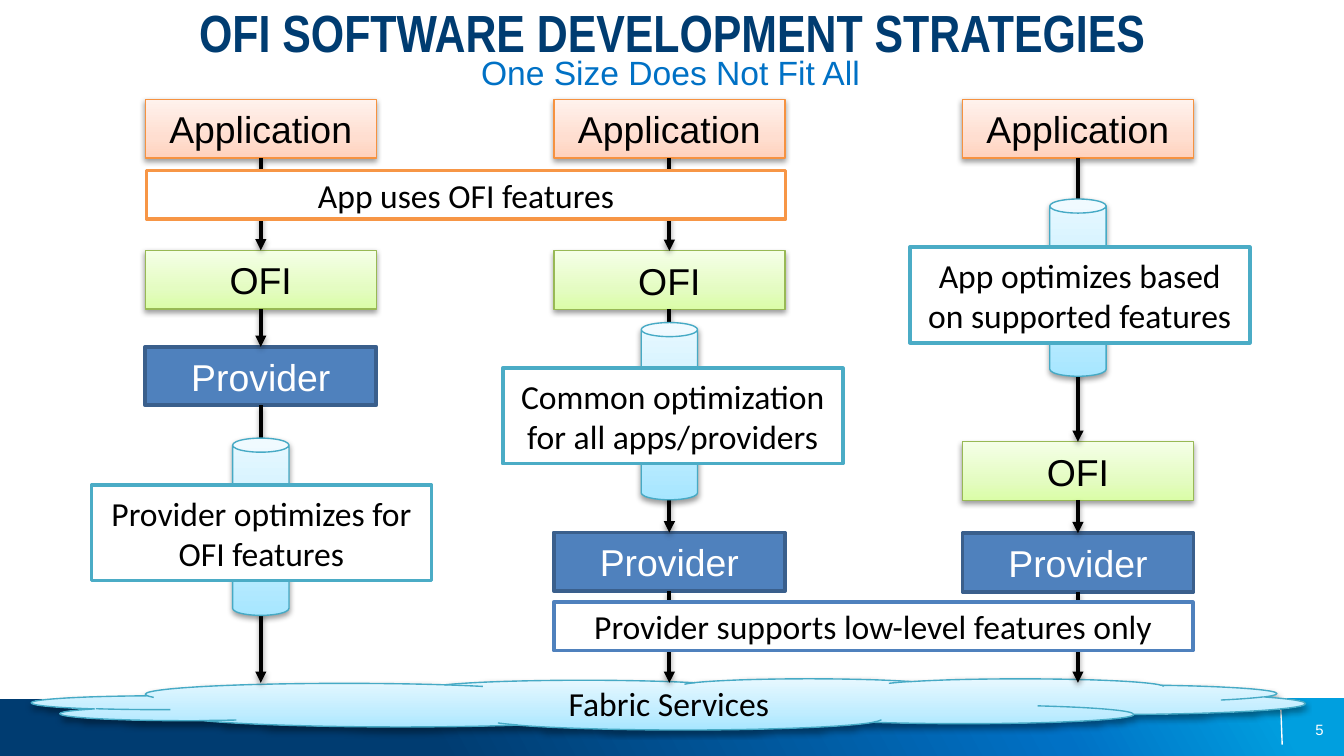
from lxml.etree import SubElement
from pptx import Presentation
from pptx.dml.color import RGBColor
from pptx.enum.shapes import MSO_CONNECTOR, MSO_SHAPE
from pptx.enum.text import MSO_ANCHOR, MSO_AUTO_SIZE, PP_ALIGN
from pptx.oxml.ns import qn
from pptx.util import Pt

PEACH = [(0, "FFD2BD"), (35, "FFDED0"), (100, "FFF2ED")]
LIME = [(0, "DAFDA7"), (35, "E4FCC2"), (100, "F5FFE7")]
SKY = [(0, "A7E6FF"), (35, "C1EDFF"), (100, "E7F8FF")]
FOOTER = [(32, "003C71"), (78, "0071C5"), (95, "009FDF")]

LAYERS = {
    "Application": dict(fill=PEACH, line="F69240", shadow=True),
    "OFI": dict(fill=LIME, line="98B955", shadow=True),
    "Provider": dict(fill="4F81BD", line="3A5F8C", weight=2),
}
FIRST_LEFT, PITCH = 77.8, 218.9
LAYER_WIDTH, LAYER_HEIGHT = 123.8, 31.4
CAN_WIDTH, CAN_HEIGHT = 30.2, 95
APPLICATION_TOP, FABRIC_TOP = 53.2, 365.8

COLUMNS = [
    dict(ofi=134.1, provider=185.8, can=234.7, label=(49, 259.9),
         text="Provider optimizes for OFI features"),
    dict(ofi=134.4, provider=285.3, can=172.8, label=(269.3, 197.3),
         text="Common optimization for all apps/providers"),
    dict(ofi=236.7, provider=285.7, can=106.6, label=(487.4, 132.5),
         text="App optimizes based on supported features"),
]
BANDS = [
    ("App uses OFI features", 78.5, 91.4, "F79646"),
    ("Provider supports low-level features only", 296.6, 322.6, "4F81BD"),
]


def color(value):
    return RGBColor.from_string(value)


def write(box, text, *, size=18, font="Calibri", ink="000000", bold=False,
          align=PP_ALIGN.CENTER, anchor=MSO_ANCHOR.MIDDLE, insets=(7.2, 3.6, 7.2, 3.6)):
    frame = box.text_frame
    frame.word_wrap = True
    frame.auto_size = MSO_AUTO_SIZE.NONE
    frame.vertical_anchor = anchor
    frame.margin_left, frame.margin_top, frame.margin_right, frame.margin_bottom = map(Pt, insets)
    para = frame.paragraphs[0]
    para.alignment = align
    span = para.add_run()
    span.text = text
    span.font.size = Pt(size)
    span.font.name = font
    span.font.bold = bold
    span.font.color.rgb = color(ink)


def add_gradient(shape, stops, angle):
    shape.fill.gradient()
    shape.fill.gradient_angle = 360 - angle
    stop_list = shape._element.spPr.find(qn("a:gradFill")).find(qn("a:gsLst"))
    for stop in list(stop_list):
        stop_list.remove(stop)
    for position, value in stops:
        stop = SubElement(stop_list, qn("a:gs"), pos=str(position * 1000))
        SubElement(stop, qn("a:srgbClr"), val=str(color(value)))


def add_shadow(effects):
    shadow = SubElement(effects, qn("a:outerShdw"), blurRad=str(Pt(3.1)), dist=str(Pt(1.6)),
                        dir="5400000", rotWithShape="0")
    tint = SubElement(shadow, qn("a:srgbClr"), val="000000")
    SubElement(tint, qn("a:alpha"), val="38000")


def add_figure(page, kind, left, top, width, height, *, fill="FFFFFF", line=None,
               weight=0.75, angle=270, shadow=False):
    shape = page.shapes.add_shape(kind, Pt(left), Pt(top), Pt(width), Pt(height))
    if isinstance(fill, str):
        shape.fill.solid()
        shape.fill.fore_color.rgb = color(fill)
    else:
        add_gradient(shape, fill, angle)
    if line:
        shape.line.color.rgb = color(line)
        shape.line.width = Pt(weight)
    else:
        shape.line.fill.background()
    shape.shadow.inherit = False
    if shadow:
        add_shadow(shape._element.spPr.find(qn("a:effectLst")))
    return shape


def add_line(page, start, end, *, ink="000000", weight=2, arrow=True):
    line = page.shapes.add_connector(MSO_CONNECTOR.STRAIGHT, *map(Pt, start + end))
    line.line.color.rgb = color(ink)
    line.line.width = Pt(weight)
    effects = SubElement(line._element.spPr, qn("a:effectLst"))
    if arrow:
        SubElement(line.line._get_or_add_ln(), qn("a:tailEnd"), type="triangle")
        add_shadow(effects)
    return line


def add_text(page, text, left, top, width, height, **style):
    box = page.shapes.add_textbox(Pt(left), Pt(top), Pt(width), Pt(height))
    write(box, text, **style)


def add_label(page, text, left, top, width, height, line):
    label = add_figure(page, MSO_SHAPE.RECTANGLE, left, top, width, height, line=line, weight=2)
    write(label, text)


def add_title(page):
    title = page.shapes.title
    title.left, title.top, title.width, title.height = map(Pt, (36, 0, 648, 27.4))
    write(title, "OFI SOFTWARE DEVELOPMENT STRATEGIES", size=28, font="Arial Narrow",
          ink="003C71", bold=True, anchor=MSO_ANCHOR.TOP, insets=(0, 0, 0, 0))
    add_text(page, "One Size Does Not Fit All", 35.3, 24.5, 648, 23, font="Arial",
             ink="0071C5", anchor=MSO_ANCHOR.TOP)


def add_footer(page):
    add_figure(page, MSO_SHAPE.RECTANGLE, 0, 374.4, 720, 30.6, fill=FOOTER, angle=331)
    add_line(page, (686.2, 380.2), (686.9, 398.9), ink="FFFFFF", weight=0.75, arrow=False)
    add_text(page, "5", 541.4, 380.2, 167.8, 21.6, size=8, font="Arial", ink="FFFFFF",
             align=PP_ALIGN.RIGHT, insets=(0, 0, 0, 0))
    cloud = add_figure(page, MSO_SHAPE.CLOUD, 17.3, 363.6, 681.8, 27.4, fill=SKY,
                       line="46AAC5", shadow=True)
    write(cloud, "Fabric Services", insets=(56, 3.6, 7.2, 3.6))


def add_column(page, left, column):
    middle = left + LAYER_WIDTH / 2
    tops = (APPLICATION_TOP, column["ofi"], column["provider"])
    layers = []
    for (name, style), top in zip(LAYERS.items(), tops):
        layer = add_figure(page, MSO_SHAPE.RECTANGLE, left, top, LAYER_WIDTH, LAYER_HEIGHT, **style)
        write(layer, name, size=20, font="Arial",
              ink="FFFFFF" if name == "Provider" else "000000")
        layers.append(layer)
    ends = tops[1:] + (FABRIC_TOP,)
    for upper, lower, top, end in zip(layers, layers[1:] + [None], tops, ends):
        arrow = add_line(page, (middle, top + LAYER_HEIGHT), (middle, end))
        arrow.begin_connect(upper, 2)
        if lower is not None:
            arrow.end_connect(lower, 0)
    add_figure(page, MSO_SHAPE.CAN, middle - CAN_WIDTH / 2, column["can"], CAN_WIDTH, CAN_HEIGHT,
               fill=SKY, line="46AAC5", shadow=True)
    add_label(page, column["text"], *column["label"], 182.2, 51.1, "4BACC6")


def main():
    deck = Presentation()
    deck.slide_width, deck.slide_height = Pt(720), Pt(405)
    page = deck.slides.add_slide(deck.slide_layouts[5])
    add_footer(page)
    for index, column in enumerate(COLUMNS):
        add_column(page, FIRST_LEFT + index * PITCH, column)
    for text, left, top, line in BANDS:
        add_label(page, text, left, top, 342.4, 25.9, line)
    add_title(page)
    deck.save("out.pptx")


if __name__ == "__main__":
    main()
